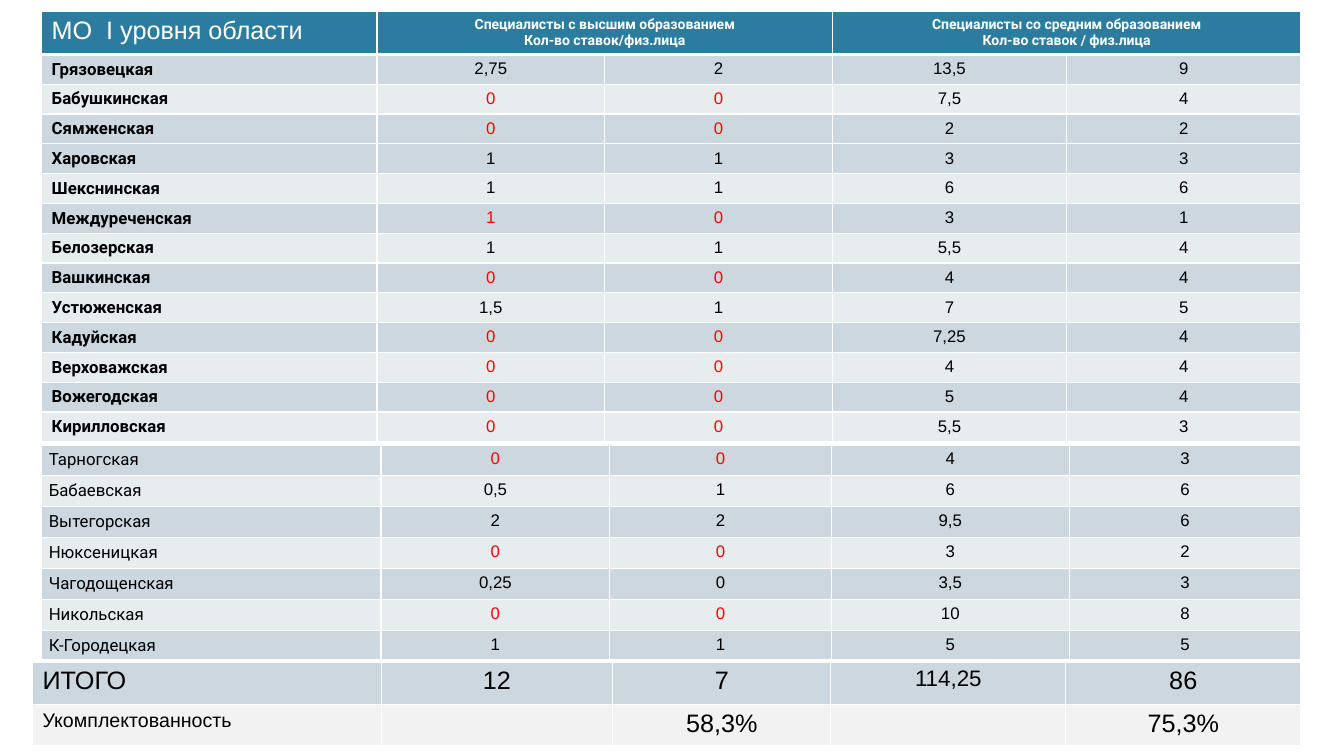
from lxml.etree import SubElement
from pptx import Presentation
from pptx.dml.color import RGBColor
from pptx.enum.text import MSO_ANCHOR, PP_ALIGN
from pptx.oxml.ns import qn
from pptx.util import Cm, Pt

HUES = {
    "head": "2C7C9F", "dark": "CDD7DF", "light": "E7ECEF", "rate": "F2F2F2",
    "white": "FFFFFF", "black": "000000", "red": "FF0000",
}
THIN, THICK = 0.96, 3

HEADS = [
    ["Специалисты с высшим образованием", "Кол-во ставок/физ.лица"],
    ["Специалисты со средним образованием", "Кол-во ставок / физ.лица"],
]
MAIN = [
    ("dark", "Грязовецкая", "2,75", "2", "13,5", "9"),
    ("light", "Бабушкинская", "0", "0", "7,5", "4"),
    ("dark", "Сямженская", "0", "0", "2", "2"),
    ("dark", "Харовская", "1", "1", "3", "3"),
    ("light", "Шекснинская", "1", "1", "6", "6"),
    ("dark", "Междуреченская", "1", "0", "3", "1"),
    ("light", "Белозерская", "1", "1", "5,5", "4"),
    ("dark", "Вашкинская", "0", "0", "4", "4"),
    ("light", "Устюженская", "1,5", "1", "7", "5"),
    ("dark", "Кадуйская", "0", "0", "7,25", "4"),
    ("light", "Верховажская", "0", "0", "4", "4"),
    ("dark", "Вожегодская", "0", "0", "5", "4"),
    ("light", "Кирилловская", "0", "0", "5,5", "3"),
]
MORE = [
    ("dark", "Тарногская", "0", "0", "4", "3"),
    ("light", "Бабаевская", "0,5", "1", "6", "6"),
    ("dark", "Вытегорская", "2", "2", "9,5", "6"),
    ("light", "Нюксеницкая", "0", "0", "3", "2"),
    ("dark", "Чагодощенская", "0,25", "0", "3,5", "3"),
    ("light", "Никольская", "0", "0", "10", "8"),
    ("dark", "К-Городецкая", "1", "1", "5", "5"),
]
# Each total is a text and its size
TOTALS = [
    ("dark", [("ИТОГО", 18), ("12", 18), ("7", 18), ("114,25", 16), ("86", 18)]),
    ("rate", [("Укомплектованность", 14), ("", 18), ("58,3%", 18),
              ("", 18), ("75,3%", 18)]),
]


def color(name):
    return RGBColor.from_string(HUES[name])


def grid(slide, box, cols, rows):
    """Add a bare table; all lengths are in centimetres."""
    left, top = box
    frame = slide.shapes.add_table(len(rows), len(cols), Cm(left), Cm(top),
                                   Cm(sum(cols)), Cm(sum(rows)))
    table = frame.table
    table.first_row = table.horz_banding = False
    for col, width in zip(table.columns, cols):
        col.width = Cm(width)
    for row, height in zip(table.rows, rows):
        row.height = Cm(height)
    return table


def paint(cell, fill, top=THIN, base=THIN):
    """Fill a cell and rule its four sides in white."""
    cell.fill.solid()
    cell.fill.fore_color.rgb = color(fill)
    props = cell._tc.get_or_add_tcPr()
    sides = {"a:lnL": THIN, "a:lnR": THIN, "a:lnT": top, "a:lnB": base}
    for place, (tag, width) in enumerate(sides.items()):
        line = SubElement(props, qn(tag), w=str(Pt(width)))
        solid = SubElement(line, qn("a:solidFill"))
        SubElement(solid, qn("a:srgbClr"), val=HUES["white"])
        props.insert(place, line)


def write(cell, lines, size, font="Arial", hue="black", bold=False, mid=True):
    frame = cell.text_frame
    for num, line in enumerate(lines):
        para = frame.add_paragraph() if num else frame.paragraphs[0]
        para.alignment = PP_ALIGN.CENTER if mid else PP_ALIGN.LEFT
        para.font.size = Pt(size)
        if line:
            run = para.add_run()
            run.text = line
            run.font.size = Pt(size)
            run.font.name = font
            run.font.bold = bold
            run.font.color.rgb = color(hue)


def fill_row(table, row, data, bold, top):
    """Write one district; whole posts with nobody in them turn red."""
    fill, name, posts, staff, *rest = data
    hue = "red" if staff == "0" and "," not in posts else "black"
    for col in range(5):
        paint(table.cell(row, col), fill, top=top)
    write(table.cell(row, 0), [name], 12, "Roboto", bold=bold, mid=False)
    for col, text in enumerate([posts, staff, *rest], 1):
        write(table.cell(row, col), [text], 12, hue=hue if col < 3 else "black")


def main_part(slide, box):
    table = grid(slide, box, [8.45, 5.74, 5.74, 5.9, 5.9],
                 [1.09] + [0.75] * len(MAIN))
    for col in range(5):
        paint(table.cell(0, col), "head", base=THICK)
    write(table.cell(0, 0), ["МО  I уровня области"], 18, hue="white", mid=False)
    for col, lines in zip((1, 3), HEADS):
        cell = table.cell(0, col)
        cell.merge(table.cell(0, col + 1))
        write(cell, lines, 10, "Roboto", "white", bold=True)
    for row, data in enumerate(MAIN, 1):
        fill_row(table, row, data, True, THICK if row == 1 else THIN)


def more_part(slide, box):
    table = grid(slide, box, [8.55, 5.77, 5.58, 6, 5.83], [0.78] * len(MORE))
    for row, data in enumerate(MORE):
        fill_row(table, row, data, False, THIN if row else THICK)
        cell = table.cell(row, 0)
        cell.vertical_anchor = MSO_ANCHOR.MIDDLE
        cell.margin_left = cell.margin_right = Cm(0.18)


def total_part(slide, box):
    table = grid(slide, box, [8.79, 5.83, 5.5, 5.92, 5.92], [1.09, 0.95])
    for row, (fill, cells) in enumerate(TOTALS):
        for col, (text, size) in enumerate(cells):
            cell = table.cell(row, col)
            paint(cell, fill, top=THIN if row else THICK)
            write(cell, [text], size, mid=col > 0)


def main():
    deck = Presentation()
    deck.slide_width, deck.slide_height = Cm(33.87), Cm(19.05)
    slide = deck.slides.add_slide(deck.slide_layouts[6])
    main_part(slide, (1.05, 0.28))
    more_part(slide, (1.05, 11.2))
    total_part(slide, (0.82, 16.66))
    deck.save("out.pptx")


if __name__ == "__main__":
    main()
